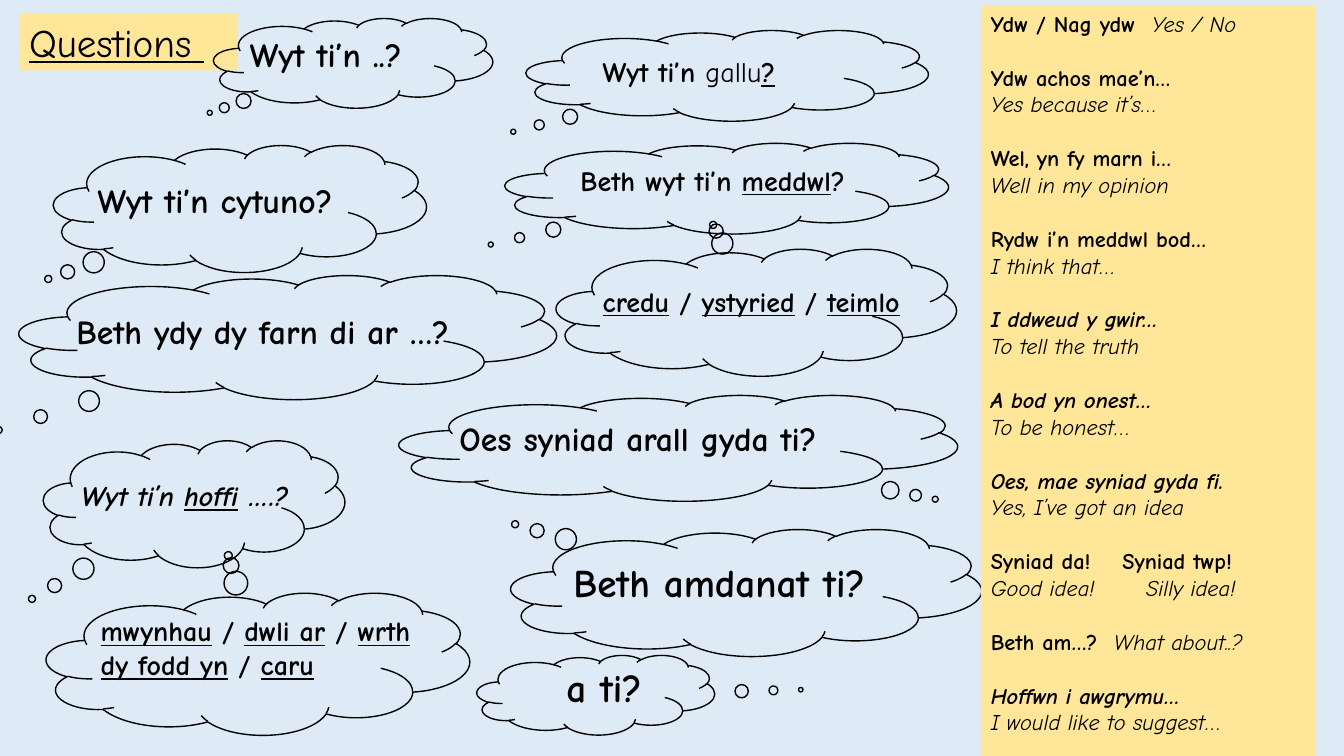
from pptx import Presentation
from pptx.dml.color import RGBColor
from pptx.enum.shapes import MSO_SHAPE
from pptx.enum.text import MSO_ANCHOR, PP_ALIGN
from pptx.oxml.ns import qn
from pptx.util import Pt
from lxml import etree

RECTANGLE = MSO_SHAPE.RECTANGLE
CLOUD = MSO_SHAPE.CLOUD_CALLOUT
TOP = MSO_ANCHOR.TOP
LEFT = PP_ALIGN.LEFT

FONT = "Comic Neue"
BLACK, SKY, YELLOW = "000000", "DEEBF7", "FFE699"
PANEL_SIZE = 16
PANEL_GAP = 19.2

# Spans are (text, style) pairs; style letters: b bold, i italic, u underline.
# Each thought: cloud frame, tail adjustments, text frame, text size, spans.
THOUGHTS = [
    ((38.2, 103.7, 266.4, 90.7), (-0.514, 0.554), (62.6, 125.3, 270, 65.5), 24,
     [("Wyt ti’n cytuno?", "b")]),
    ((360.7, 102.2, 316.8, 64.8), (-0.532, 0.619), (407.5, 113, 293.8, 55.4), 20,
     [("Beth wyt ti’n ", "b"), ("meddwl", "bu"), ("?", "b")]),
    ((365, 378, 336.2, 90.7), (-0.491, -0.539), (402.5, 395.3, 270, 74.9), 28,
     [("Beth amdanat ti?", "b")]),
    ((31, 314.6, 215.3, 90.7), (-0.538, 0.748), (51.1, 338.4, 270, 55.4), 20,
     [("Wyt ti’n ", "bi"), ("hoffi", "biu"), (" ….?", "bi")]),
    ((285.1, 282.2, 398.9, 75.6), (0.46, 0.484), (321.1, 295.2, 358.6, 65.5), 24,
     [("Oes syniad arall gyda ti?", "b")]),
    ((13.7, 196.6, 383.8, 88.6), (-0.538, 0.748), (47.5, 218.2, 331.9, 65.5), 24,
     [("Beth ydy dy farn di ar …?", "b")]),
    ((397.4, 177.8, 285.8, 90.7), (-0.108, -0.689), (423.4, 199.4, 259.9, 53.3), 20,
     [("credu", "bu"), (" / ", "b"), ("ystyried", "bu"), (" / ", "b"),
      ("teimlo", "bu")]),
    ((33.1, 423.4, 302.4, 101.5), (-0.07, -0.762), (64.8, 434.9, 259.9, 77.8), 20,
     [("mwynhau", "bu"), (" / ", "b"), ("dwli ar", "bu"), (" / ", "b"),
      ("wrth dy fodd yn", "bu"), (" / ", "b"), ("caru", "bu")]),
    ((340.6, 468, 169.9, 56.9), (0.862, -0.067), (397.4, 470.2, 270, 74.9), 28,
     [("a ti?", "b")]),
    ((152.6, 13, 199.4, 64.1), (-0.514, 0.554), (171.4, 20.9, 270, 65.5), 24,
     [("Wyt ti’n ..?", "b")]),
    ((375.8, 21.6, 287.3, 64.8), (-0.532, 0.619), (423.4, 35.3, 293.8, 55.4), 20,
     [("Wyt ti’n ", "b"), ("gallu", ""), ("?", "bu")]),
]

# Each answer is a list of lines: (spans, tab stop or None).
ANSWERS = [
    [([("Ydw / Nag ydw\t", "b"), ("Yes / No", "i")], 115)],
    [([("Ydw achos mae’n…", "b")], None), ([("Yes because it’s…", "i")], None)],
    [([("Wel, yn fy marn i…", "b")], None), ([("Well in my opinion", "i")], None)],
    [([("Rydw i’n meddwl bod…", "b")], None), ([("I think that…", "i")], None)],
    [([("I ddweud y gwir…", "bi")], None), ([("To tell the truth", "i")], None)],
    [([("A bod yn onest…", "bi")], None), ([("To be honest…", "i")], None)],
    [([("Oes, mae syniad gyda fi.", "bi")], None),
     ([("Yes, I’ve got an idea", "i")], None)],
    [([("Syniad da!\tSyniad twp!", "b")], 94),
     ([("Good idea!\tSilly idea!", "i")], 111)],
    [([("Beth am…?\t", "b"), ("What about..?", "i")], 88)],
    [([("Hoffwn i awgrymu…", "bi")], None),
     ([("I would like to suggest…", "i")], None)],
]


def color(value):
    return RGBColor.from_string(value)


def points(frame):
    return [Pt(length) for length in frame]


def write_spans(para, spans, size):
    para.alignment = LEFT
    for text, style in spans:
        span = para.add_run()
        span.text = text
        formats = {"name": FONT, "size": Pt(size), "bold": "b" in style,
                   "italic": "i" in style, "underline": "u" in style}
        for name, value in formats.items():
            setattr(span.font, name, value)
        span.font.color.rgb = color(BLACK)


def set_tab(para, position):
    properties = para._p.get_or_add_pPr()
    tabs = etree.SubElement(properties, qn("a:tabLst"))
    etree.SubElement(tabs, qn("a:tab"), pos=str(Pt(position)), algn="l")


def add_yellow_box(page, frame):
    """Add a borderless yellow rectangle and return its text frame."""
    box = page.shapes.add_shape(RECTANGLE, *points(frame))
    box.shadow.inherit = False
    box.fill.solid()
    box.fill.fore_color.rgb = color(YELLOW)
    box.line.fill.background()
    box.text_frame.word_wrap = True
    box.text_frame.vertical_anchor = TOP
    return box.text_frame


def add_cloud(page, frame, tail):
    cloud = page.shapes.add_shape(CLOUD, *points(frame))
    cloud.shadow.inherit = False
    cloud.fill.background()
    cloud.line.color.rgb = color(BLACK)
    cloud.line.width = Pt(1)
    for index, value in enumerate(tail):
        cloud.adjustments[index] = value


def add_text(page, frame, size, spans):
    box = page.shapes.add_textbox(*points(frame))
    box.text_frame.word_wrap = True
    write_spans(box.text_frame.paragraphs[0], spans, size)


def add_answers(page):
    frame = add_yellow_box(page, (700.6, 3.6, 239, 550))
    para = frame.paragraphs[0]
    for number, answer in enumerate(ANSWERS):
        for row, (spans, tab) in enumerate(answer):
            if number or row:
                para = frame.add_paragraph()
            if number and not row:
                para.space_before = Pt(PANEL_GAP)
            if tab:
                set_tab(para, tab)
            write_spans(para, spans, PANEL_SIZE)


def main():
    deck = Presentation()
    deck.slide_width, deck.slide_height = Pt(960), Pt(540)
    page = deck.slides.add_slide(deck.slide_layouts[6])
    page.background.fill.solid()
    page.background.fill.fore_color.rgb = color(SKY)

    title = add_yellow_box(page, (13.7, 9.4, 156.2, 41))
    write_spans(title.paragraphs[0], [("Questions ", "u")], 28)
    for cloud_frame, tail, text_frame, size, spans in THOUGHTS:
        add_cloud(page, cloud_frame, tail)
        add_text(page, text_frame, size, spans)
    add_answers(page)
    deck.save("out.pptx")


if __name__ == "__main__":
    main()
